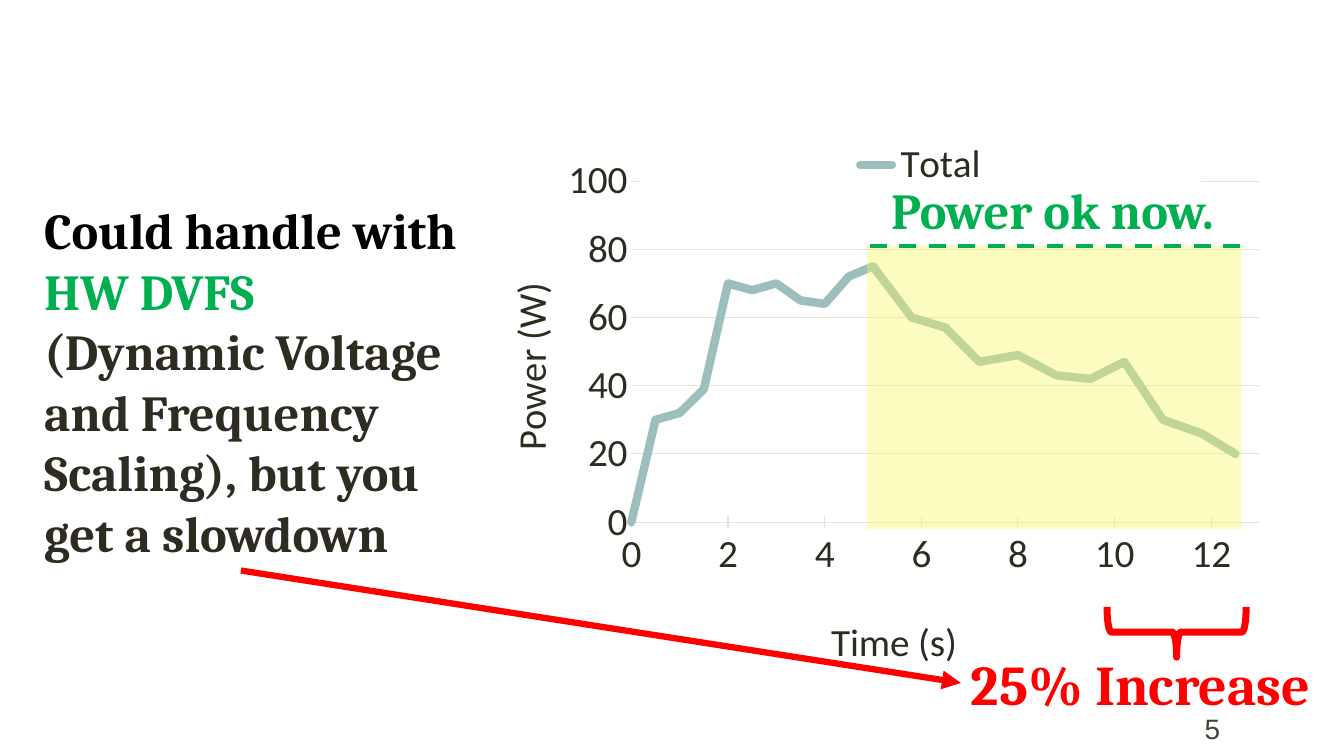
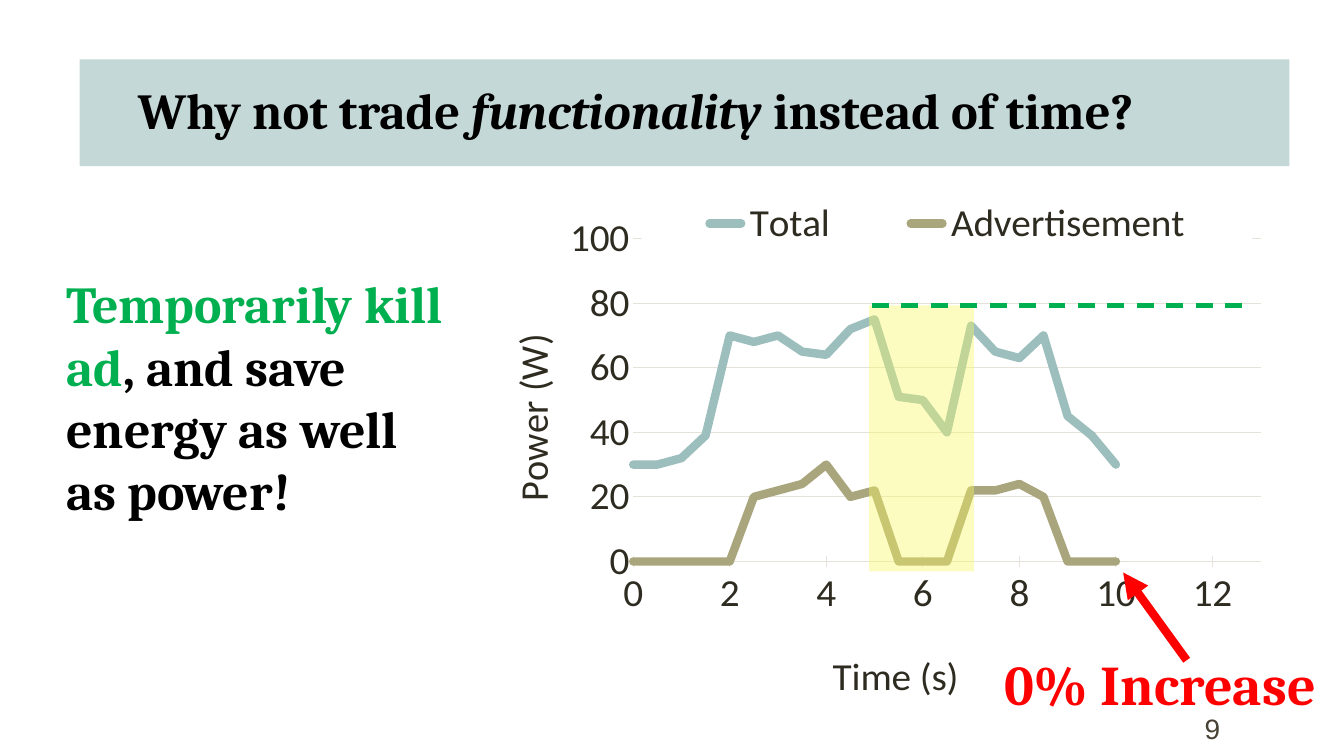
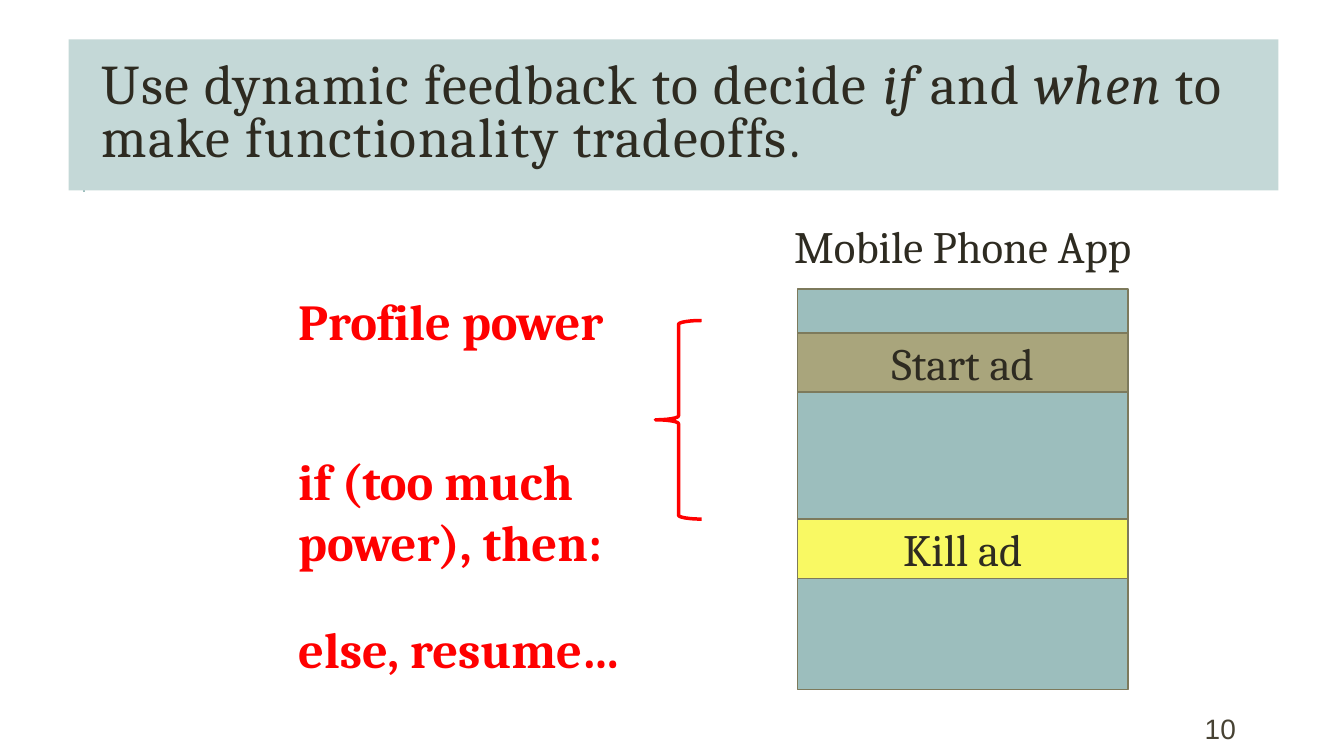
from lxml import etree
from pptx import Presentation
from pptx.chart.data import XyChartData
from pptx.dml.color import RGBColor
from pptx.enum.chart import XL_CHART_TYPE as CT, XL_LEGEND_POSITION as LP, XL_TICK_MARK as TM
from pptx.enum.dml import MSO_LINE
from pptx.enum.shapes import MSO_CONNECTOR, MSO_SHAPE
from pptx.enum.text import MSO_ANCHOR, PP_ALIGN
from pptx.oxml.ns import qn
from pptx.util import Inches, Pt

INK, BLACK, GREY = "2E2B21", "000000", "474233"
TEAL, PALE_TEAL, OLIVE, DARK_OLIVE = "9CBEBD", "C4D8D7", "A9A57C", "7D7A5C"
GREEN, RED, YELLOW, GRID, WHITE = "00B050", "FF0000", "F9F963", "E4E2D9", "FFFFFF"

HALVES = [i / 2 for i in range(21)]  # 0 to 10 s in half-second steps
SLOWED_TIMES = HALVES[:11] + [5.8, 6.5, 7.2, 8, 8.8, 9.5, 10.2, 11, 11.8, 12.5]
WARM_UP = [32, 39, 70, 68, 70, 65, 64, 72, 75]
SLOWED_POWER = [0, 30] + WARM_UP + [60, 57, 47, 49, 43, 42, 47, 30, 26, 20]
TRADED_POWER = [30, 30] + WARM_UP + [51, 50, 40, 73, 65, 63, 70, 45, 39, 30]
AD_POWER = [0] * 5 + [20, 22, 24, 30, 20, 22, 0, 0, 0, 22, 22, 24, 20, 0, 0, 0]


def rgb(color):
    return RGBColor.from_string(color)


def sub(parent, tag, **attrs):
    el = etree.SubElement(parent, qn(tag))
    for key, value in attrs.items():
        el.set(key, str(value))
    return el


# Basic parts
def add_text(s, box, paragraphs, size, color=INK, bold=False, font="Cambria",
             anchor=MSO_ANCHOR.TOP, align=PP_ALIGN.LEFT):
    """Each paragraph is a list of (text, font settings) runs."""
    shape = s.shapes.add_textbox(*map(Inches, box))
    fill_text(shape.text_frame, paragraphs, size, color, bold, font, anchor, align)
    return shape


def fill_text(tf, paragraphs, size, color, bold, font, anchor, align):
    tf.word_wrap = True
    tf.vertical_anchor = anchor
    for i, runs in enumerate(paragraphs):
        p = tf.add_paragraph() if i else tf.paragraphs[0]
        p.alignment = align
        p.font.name, p.font.size, p.font.bold = font, Pt(size), bold
        p.font.color.rgb = rgb(color)
        for text, style in runs:
            r = p.add_run()
            r.text = text
            if "color" in style:
                r.font.color.rgb = rgb(style["color"])
            if "italic" in style:
                r.font.italic = True
            if "size" in style:
                r.font.size = Pt(style["size"])


def add_rect(s, box, fill, line=None, alpha=None, label=None):
    shape = s.shapes.add_shape(MSO_SHAPE.RECTANGLE, *map(Inches, box))
    shape.shadow.inherit = False
    shape.fill.solid()
    shape.fill.fore_color.rgb = rgb(fill)
    if alpha:
        color = shape.fill._xPr.find(".//" + qn("a:srgbClr"))
        sub(color, "a:alpha", val=alpha * 1000)
    if line:
        shape.line.color.rgb = rgb(line)
        shape.line.width = Pt(1.25)
    else:
        shape.line.fill.background()
    if label:
        fill_text(shape.text_frame, [[(label, {})]], 32, INK, False, "Cambria",
                  MSO_ANCHOR.MIDDLE, PP_ALIGN.CENTER)
    return shape


def add_brace(s, box, width, rotation=0):
    shape = s.shapes.add_shape(MSO_SHAPE.LEFT_BRACE, *map(Inches, box))
    shape.shadow.inherit = False
    shape.fill.background()
    shape.line.color.rgb = rgb(RED)
    shape.line.width = Pt(width)
    shape.rotation = rotation


def add_line(s, start, end, color, width, dash=False, arrow=False, target=None):
    line = s.shapes.add_connector(MSO_CONNECTOR.STRAIGHT, *map(Inches, start + end))
    line.line.color.rgb = rgb(color)
    line.line.width = Pt(width)
    if dash:
        line.line.dash_style = MSO_LINE.DASH
    if arrow:
        sub(line.line._get_or_add_ln(), "a:tailEnd", type="triangle")
    sub(line._element.spPr, "a:effectLst")
    if target is not None:
        line.end_connect(target, 1)


def add_slide_number(s, number):
    add_text(s, (11.85, 7.08, 1.06, 0.3), [[(str(number), {})]], 20, GREY,
             font="Arial", anchor=MSO_ANCHOR.MIDDLE)


def add_increase(s, left, text):
    return add_text(s, (left, 6.39, 3.83, 0.77), [[(text, {})]], 40, RED, True)


# Power chart
def set_layout(el, inner=False, **fractions):
    for old in el.findall(qn("c:layout")):
        el.remove(old)
    leading = [child for child in el if child.tag in (qn("c:tx"), qn("c:legendPos"))]
    layout = etree.Element(qn("c:layout"))
    manual = sub(layout, "c:manualLayout")
    if inner:
        sub(manual, "c:layoutTarget", val="inner")
    for mode in ("c:xMode", "c:yMode"):
        sub(manual, mode, val="edge")
    for key, value in fractions.items():
        sub(manual, "c:" + key, val=value)
    el.insert(len(leading), layout)


def style_axis(axis, title, top, step, x, y):
    axis.minimum_scale, axis.maximum_scale, axis.major_unit = 0, top, step
    tf = axis.axis_title.text_frame
    tf.text = title
    font = tf.paragraphs[0].font
    font.name, font.size, font.bold = "Calibri", Pt(28), False
    font.color.rgb = rgb(INK)
    set_layout(axis.axis_title._element, x=x, y=y)
    return tf


def add_power_chart(s, box, times, series, legend_width):
    data = XyChartData()
    for name, values, _ in series:
        points = data.add_series(name)
        for x, y in zip(times, values):
            points.add_data_point(x, y)
    chart = s.shapes.add_chart(CT.XY_SCATTER_LINES_NO_MARKERS, *map(Inches, box), data).chart
    chart.has_title = False
    chart.font.name, chart.font.size = "Calibri", Pt(28)
    chart.font.color.rgb = rgb(INK)
    plot = chart.plots[0]
    plot.vary_by_categories = False
    set_layout(chart._chartSpace.chart.plotArea, True, x=0.2, y=0.1, w=0.75, h=0.63)
    for points, (_, _, color) in zip(plot.series, series):
        points.smooth = False
        points.format.line.color.rgb = rgb(color)
        points.format.line.width = Pt(6)
        ln = points.format.line._get_or_add_ln()
        ln.set("cap", "rnd")
        sub(ln, "a:round")

    # Axes
    time, power = chart.category_axis, chart.value_axis
    style_axis(time, "Time (s)", 13, 2, 0.43, 0.89)
    tf = style_axis(power, "Power (W)", 100, 20, 0.04, 0.28)
    tf._txBody.bodyPr.set("rot", "-5400000")
    tf._txBody.bodyPr.set("vert", "horz")
    time.has_major_gridlines, power.has_major_gridlines = False, True
    time.major_tick_mark, power.major_tick_mark = TM.CROSS, TM.NONE
    time.tick_labels.number_format = "0"
    time.tick_labels.number_format_is_linked = False
    for line in (time.format.line, power.major_gridlines.format.line):
        line.color.rgb = rgb(GRID)
        line.width = Pt(0.75)
    power.format.line.fill.background()

    # Legend over the top gridline
    chart.has_legend = True
    legend = chart.legend
    legend.position = LP.BOTTOM
    legend.include_in_layout = False
    set_layout(legend._element, x=0.21, y=0.02, w=legend_width, h=0.1)
    fill = sub(sub(legend._element, "c:spPr"), "a:solidFill")
    sub(fill, "a:srgbClr", val=WHITE)


def add_power_limit(s, left, top, width, height):
    """Shaded period under a dashed limit that runs to the chart's right end."""
    add_rect(s, (left, top, width, height), YELLOW, alpha=40)
    add_line(s, (left + 3.7, top), (left, top), GREEN, 3, dash=True)


# Slides
def slowdown_slide(s):
    add_power_chart(s, (4.6, 1.26, 8.31, 5.47), SLOWED_TIMES,
                    [("Total", SLOWED_POWER, TEAL)], 0.67)
    add_slide_number(s, 5)
    add_text(s, (0.34, 1.93, 4.39, 3.74), [[
        ("Could handle with ", {"color": BLACK}), ("HW DVFS ", {"color": GREEN}),
        ("(Dynamic Voltage and Frequency Scaling), but you get a slowdown", {}),
    ]], 36, bold=True)
    add_power_limit(s, 8.6, 2.44, 3.71, 2.81)
    add_brace(s, (11.42, 5.58, 0.5, 1.38), 5, rotation=270)
    increase = add_increase(s, 9.53, "25% Increase")
    add_text(s, (8.74, 1.73, 3.75, 0.71), [[("Power ok now.", {})]], 36, GREEN, True)
    add_line(s, (2.39, 5.66), (9.53, 6.78), RED, 4.5, arrow=True, target=increase)


def functionality_slide(s):
    add_power_chart(s, (4.62, 1.86, 8.3, 5.21), HALVES,
                    [("Total", TRADED_POWER, TEAL), ("Advertisement", AD_POWER, OLIVE)], 0.73)
    add_rect(s, (0.79, 0.59, 12, 1.06), PALE_TEAL)
    add_slide_number(s, 9)
    add_text(s, (1.27, 0.74, 11.33, 0.71), [[
        ("Why not trade ", {}), ("functionality", {"italic": True}),
        (" instead of time?", {}),
    ]], 36, BLACK, True)
    add_text(s, (0.56, 2.65, 3.98, 2.59), [[
        ("Temporarily kill ad", {"color": GREEN}),
        (", and save energy as well as power!", {}),
    ]], 37, BLACK, True)
    add_power_limit(s, 8.62, 3.03, 1.04, 2.64)
    add_line(s, (11.77, 6.55), (11.14, 5.68), RED, 6, arrow=True)
    add_increase(s, 9.86, "0% Increase")


def add_app_stack(s, left, top, width, height):
    add_rect(s, (left, top, width, height), TEAL, DARK_OLIVE)
    for offset, color, label in ((0.43, OLIVE, "Start ad"), (2.28, YELLOW, "Kill ad")):
        add_rect(s, (left, top + offset, width, 0.59), color, DARK_OLIVE, label=label)
    add_text(s, (left - 0.34, top - 0.75, width + 0.68, 0.64),
             [[("Mobile Phone App", {})]], 32, align=PP_ALIGN.CENTER)


def feedback_slide(s):
    add_line(s, (0.83, 1.9), (0.83, 0.9), TEAL, 1.5)
    add_rect(s, (0.68, 0.39, 12, 1.5), PALE_TEAL)
    title = add_text(s, (0.91, 0.32, 11.77, 1.64), [[
        ("Use dynamic feedback to decide ", {}), ("if ", {"italic": True}), ("and ", {}),
        ("when", {"italic": True}), (" to make functionality tradeoffs", {}),
        (".", {"size": 36}),
    ]], 40, anchor=MSO_ANCHOR.MIDDLE)
    p = title.text_frame.paragraphs[0]
    p.line_spacing = 0.8
    for r in p.runs:
        r.font._element.set("spc", "100")
    add_slide_number(s, 10)
    add_brace(s, (6.5, 3.18, 0.46, 1.97), 2.5)
    for top, height, lines in ((2.83, 0.71, ["Profile power"]),
                               (4.42, 1.31, ["if (too much", "power), then:"]),
                               (6.08, 0.71, ["else, resume…"])):
        add_text(s, (2.86, top, 3.5, height), [[(line, {})] for line in lines], 36, RED, True)
    add_app_stack(s, 7.91, 2.87, 3.28, 3.97)


def main():
    prs = Presentation()
    prs.slide_width, prs.slide_height = Inches(13.33), Inches(7.5)
    for build in (slowdown_slide, functionality_slide, feedback_slide):
        build(prs.slides.add_slide(prs.slide_layouts[6]))
    prs.save("out.pptx")


if __name__ == "__main__":
    main()
